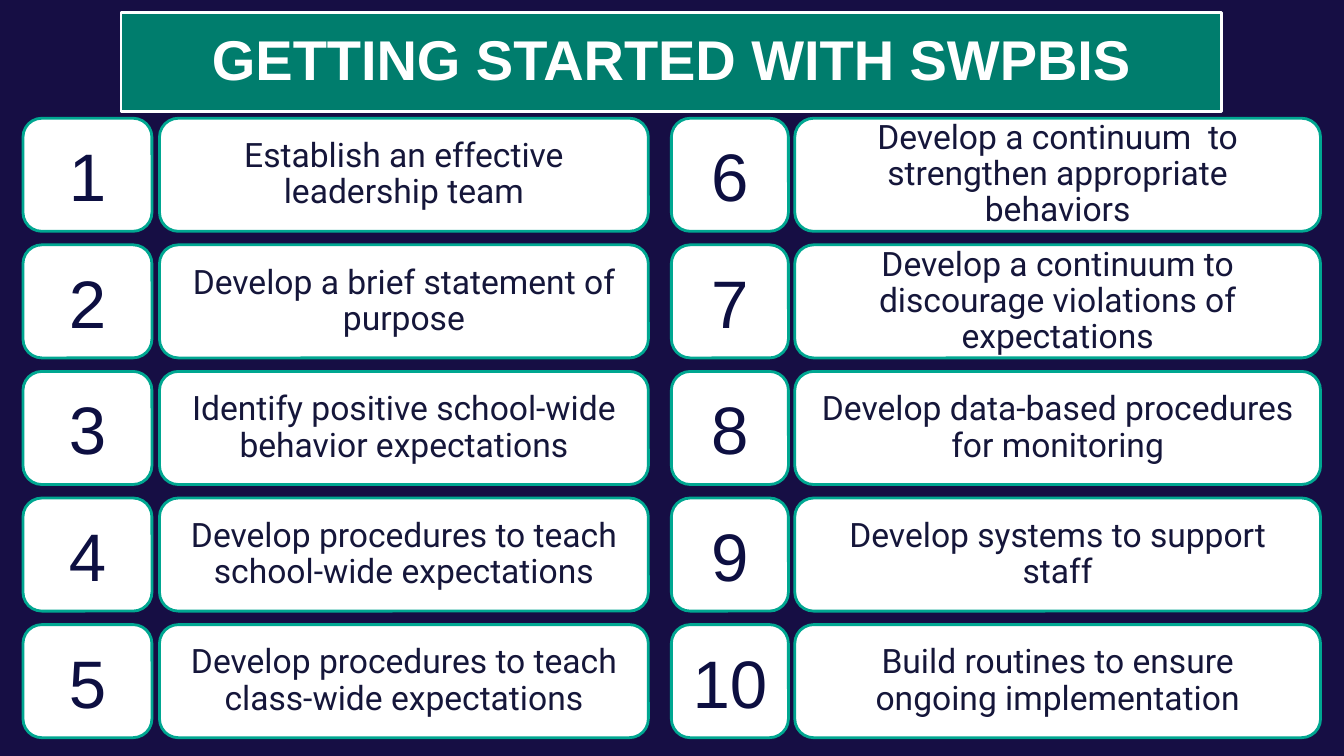
"""Build the ten-step SWPBIS starter slide."""
from dataclasses import dataclass

import lxml.etree
import pptx
import pptx.dml.color
import pptx.enum.shapes
import pptx.enum.text
import pptx.oxml
import pptx.oxml.ns
import pptx.util

Cm = pptx.util.Cm


@dataclass(frozen=True)
class Theme:
    night: str = "160E44"
    white: str = "FFFFFF"
    teal: str = "00A791"
    banner: str = "007D6D"
    number_ink: str = "0D0F41"
    step_ink: str = "15163A"
    title_size: int = 40
    number_size: int = 48
    step_size: int = 24
    outline: int = 2


theme = Theme()


def color(value):
    return pptx.dml.color.RGBColor.from_string(value)


def write(box, text, *, font, size, ink, bold=False, spacing=1.0, inset=(0.25, 0.13),
          fill=theme.white, line=theme.teal):
    box.fill.solid()
    box.fill.fore_color.rgb = color(fill)
    box.line.color.rgb = color(line)
    box.line.width = pptx.util.Pt(theme.outline)
    frame = box.text_frame
    frame.word_wrap = True
    frame.auto_size = pptx.enum.text.MSO_AUTO_SIZE.NONE
    frame.vertical_anchor = pptx.enum.text.MSO_ANCHOR.MIDDLE
    frame.margin_left = frame.margin_right = Cm(inset[0])
    frame.margin_top = frame.margin_bottom = Cm(inset[1])
    para = frame.paragraphs[0]
    para.alignment = pptx.enum.text.PP_ALIGN.CENTER
    para.line_spacing = spacing
    para.space_before = pptx.util.Pt(0)
    span = para.add_run()
    span.text = text
    span.font.name = font
    span.font.size = pptx.util.Pt(size)
    span.font.bold = bold
    span.font.color.rgb = color(ink)


deck = pptx.Presentation()
deck.slide_width, deck.slide_height = Cm(33.87), Cm(19.05)
page = deck.slides.add_slide(deck.slide_layouts[5])
page.background.fill.solid()
page.background.fill.fore_color.rgb = color(theme.night)

title = page.shapes.title
title.left, title.top, title.width, title.height = Cm(3.05), Cm(0.31), Cm(27.74), Cm(2.5)
outline = lxml.etree.SubElement(title.element.spPr, pptx.oxml.ns.qn("a:prstGeom"), prst="roundRect")
guides = lxml.etree.SubElement(outline, pptx.oxml.ns.qn("a:avLst"))
lxml.etree.SubElement(guides, pptx.oxml.ns.qn("a:gd"), name="adj", fmla="val 11500")
write(title, "GETTING STARTED WITH SWPBIS", font="Arial", size=theme.title_size, ink=theme.white,
      bold=True, spacing=0.9, inset=(0.36, 0.25), fill=theme.banner, line=theme.white)

columns = [
    (1, (0.58, 3.25), (4.02, 12.32), [
        "Establish an effective leadership team",
        "Develop a brief statement of purpose",
        "Identify positive school-wide behavior expectations",
        "Develop procedures to teach school-wide expectations",
        "Develop procedures to teach class-wide expectations",
    ]),
    (6, (16.92, 2.95), (20.03, 13.25), [
        "Develop a continuum  to strengthen appropriate behaviors",
        "Develop a continuum to discourage violations of expectations",
        "Develop data-based procedures for monitoring",
        "Develop systems to support staff",
        "Build routines to ensure ongoing implementation",
    ]),
]
first_top, row_step, row_height = 2.98, 3.19, 2.85
number_format = dict(font="Arial", size=theme.number_size, ink=theme.number_ink)
step_format = dict(font="Roboto", size=theme.step_size, ink=theme.step_ink,
                   spacing=0.9, inset=(0.48, 0.48))

for first_number, number_span, step_span, steps in columns:
    column = page.shapes.add_group_shape()
    for row, step in enumerate(steps):
        top = first_top + row * row_step
        cards = [(number_span, str(first_number + row), number_format),
                 (step_span, step, step_format)]
        for (left, width), text, style in cards:
            card = column.shapes.add_shape(pptx.enum.shapes.MSO_SHAPE.ROUNDED_RECTANGLE,
                                           Cm(left), Cm(top), Cm(width), Cm(row_height))
            card.shadow.inherit = False
            write(card, text, **style)

deck.save("out.pptx")
